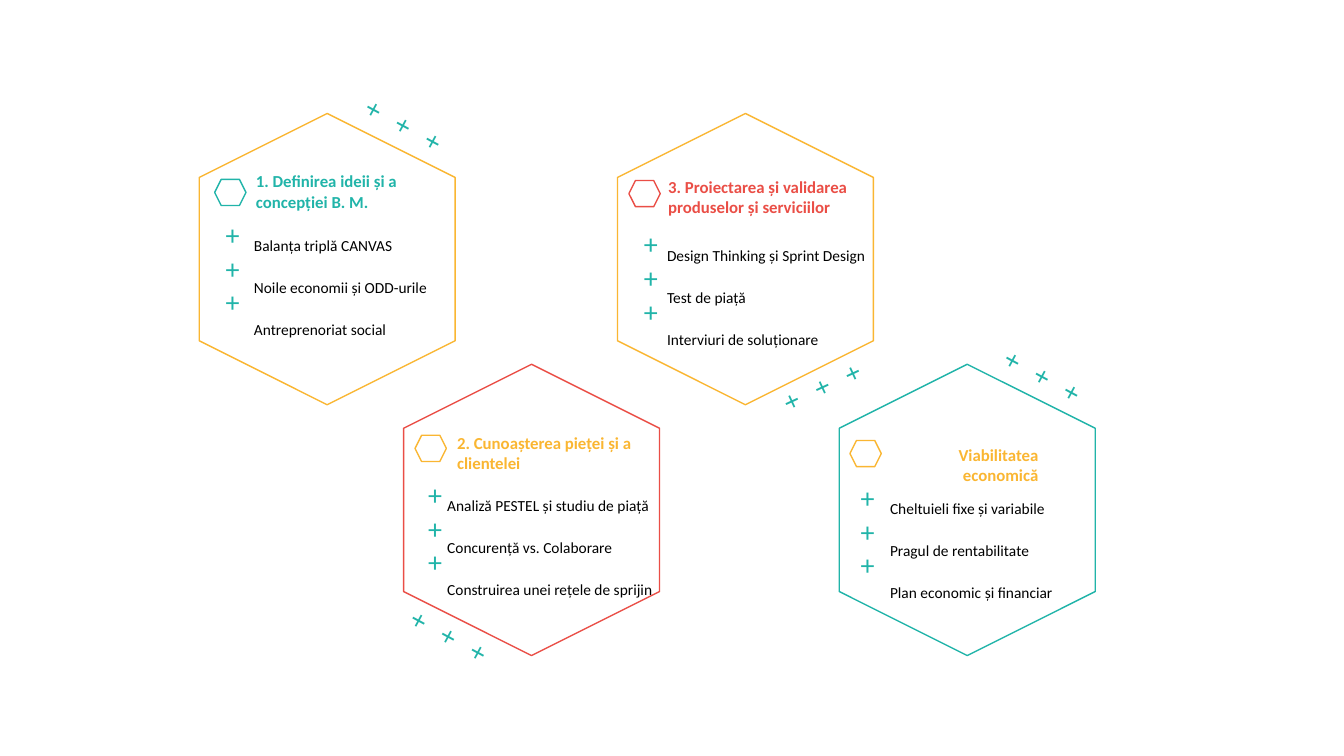
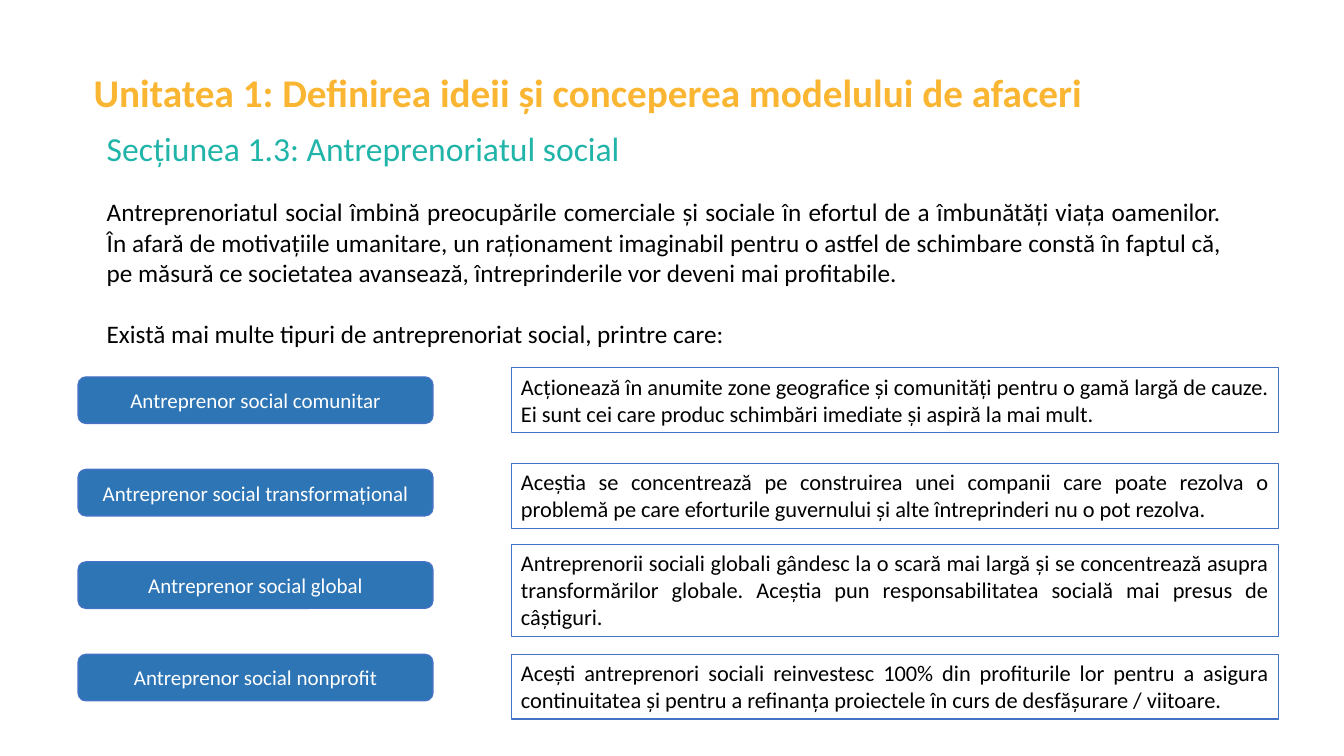
from collections import namedtuple

from pptx import Presentation
from pptx.dml.color import RGBColor
from pptx.enum import shapes, text
from pptx.util import Cm, Pt

FONT = "Calibri"
TEAL, YELLOW, RED = "21B4A9", "FAB632", "EA4E46"
BLACK, WHITE = "000000", "FFFFFF"
BLUE, OUTLINE = "2E75B5", "4472C4"
SHAPE, ALIGN = shapes.MSO_SHAPE, text.PP_ALIGN

Box = namedtuple("Box", "left top width height")
Style = namedtuple("Style", "size color bold align", defaults=(False, ALIGN.LEFT))
# Offsets inside a card are (left, top) pairs in centimetres.
Card = namedtuple(
    "Card", "left top outline accent title title_style title_at title_width "
    "items items_at items_width icon_at marks_at corner_at corner_angle")

HEXAGON_WIDTH, HEXAGON_HEIGHT = 6.45, 7.34
UPPER_ROW, LOWER_ROW = 2.86, 9.18
MARK_STYLE = Style(20, TEAL)
ITEM_STYLE = Style(11, BLACK)

CARDS = [
    Card(5.02, UPPER_ROW, YELLOW, TEAL, "1. Definirea ideii și a concepției B. M.",
         Style(12, TEAL, True), (1.18, 1.33), 5.28,
         ["Balanța triplă CANVAS", "Noile economii și ODD-urile",
          "Antreprenoriat social"],
         (1.13, 2.37), 5, (0.39, 1.66), (0.42, 2.5), (4.61, -1.21), 298.4),
    Card(10.17, LOWER_ROW, RED, YELLOW, "2. Cunoașterea pieței și a clientelei",
         Style(12, YELLOW, True), (1.1, 1.59), 5.33,
         ["Analiză PESTEL și studiu de piață", "Concurență vs. Colaborare",
          "Construirea unei rețele de sprijin"],
         (0.85, 2.6), 6.17, (0.29, 1.79), (0.37, 2.73), (0.6, 5.35), 298.4),
    Card(15.56, UPPER_ROW, YELLOW, RED,
         "3. Proiectarea și validarea produselor și serviciilor",
         Style(12, RED, True), (1.03, 1.46), 5.41,
         ["Design Thinking și Sprint Design", "Test de piață",
          "Interviuri de soluționare"],
         (1, 2.63), 6.65, (0.29, 1.69), (0.42, 2.73), (4.53, 5.42), 245.2),
    Card(21.15, LOWER_ROW, TEAL, YELLOW, "Viabilitatea economică",
         Style(12, YELLOW, True, ALIGN.RIGHT), (1.03, 1.89), 4.24,
         ["Cheltuieli fixe și variabile", "Pragul de rentabilitate",
          "Plan economic și financiar"],
         (1.03, 2.68), 6.65, (0.27, 1.92), (0.29, 2.81), (4.58, -1.21), 298.4),
]

INTRO = [
    "Antreprenoriatul social îmbină preocupările comerciale și sociale în efortul "
    "de a îmbunătăți viața oamenilor. În afară de motivațiile umanitare, un "
    "raționament imaginabil pentru o astfel de schimbare constă în faptul că, pe "
    "măsură ce societatea avansează, întreprinderile vor deveni mai profitabile.",
    "Există mai multe tipuri de antreprenoriat social, printre care:",
]

# Label, description, rise of the description above the label, its height.
ENTREPRENEURS = [
    ("Antreprenor social comunitar",
     "Acționează în anumite zone geografice și comunități pentru o gamă largă de "
     "cauze. Ei sunt cei care produc schimbări imediate și aspiră la mai mult.",
     0.23, 1.63),
    ("Antreprenor social transformațional",
     "Aceștia se concentrează pe construirea unei companii care poate rezolva o "
     "problemă pe care eforturile guvernului și alte întreprinderi nu o pot rezolva.",
     0.15, 1.63),
    ("Antreprenor social global",
     "Antreprenorii sociali globali gândesc la o scară mai largă și se concentrează "
     "asupra transformărilor globale. Aceștia pun responsabilitatea socială mai "
     "presus de câștiguri.",
     0.44, 2.31),
    ("Antreprenor social nonprofit",
     "Acești antreprenori sociali reinvestesc 100% din profiturile lor pentru a "
     "asigura continuitatea și pentru a refinanța proiectele în curs de desfășurare "
     "/ viitoare.",
     0, 1.63),
]


def rgb(color):
    return RGBColor.from_string(color)


def write(shape, lines, style, grow=True, spacing=None, gap=0):
    """Fill a shape with paragraphs; gap is the space between them in points."""
    frame = shape.text_frame
    frame.word_wrap = True
    if grow:
        frame.auto_size = text.MSO_AUTO_SIZE.SHAPE_TO_FIT_TEXT
    for index, line in enumerate(lines):
        para = frame.add_paragraph() if index else frame.paragraphs[0]
        para.text = line
        para.alignment = style.align
        if spacing:
            para.line_spacing = spacing
        if index and gap:
            para.space_before = Pt(gap)
        font = para.runs[0].font
        font.name, font.size, font.bold = FONT, Pt(style.size), style.bold
        font.color.rgb = rgb(style.color)


def add_text(page, box, lines, style, **options):
    label = page.shapes.add_textbox(*map(Cm, box))
    write(label, lines, style, **options)
    return label


def add_outline(page, kind, box, line, weight=1, fill=None):
    shape = page.shapes.add_shape(kind, *map(Cm, box))
    shape.shadow.inherit = False
    if fill:
        shape.fill.solid()
        shape.fill.fore_color.rgb = rgb(fill)
    else:
        shape.fill.background()
    shape.line.color.rgb = rgb(line)
    shape.line.width = Pt(weight)
    return shape


def add_marks(page, left, top, width, angle=0):
    """Column of plus signs, one per line because the box is narrow."""
    marks = add_text(page, Box(left, top, width, 2.82), ["+++"], MARK_STYLE)
    marks.rotation = angle


def add_card(page, card):
    def inside(offset, width, height):
        return Box(card.left + offset[0], card.top + offset[1], width, height)

    # The upright hexagon is a lying one turned about its centre.
    shift = (HEXAGON_HEIGHT - HEXAGON_WIDTH) / 2
    frame = add_outline(
        page, SHAPE.HEXAGON,
        inside((-shift, shift), HEXAGON_HEIGHT, HEXAGON_WIDTH), card.outline)
    frame.rotation = 90
    add_outline(page, SHAPE.HEXAGON, inside(card.icon_at, 0.79, 0.66), card.accent)
    add_text(page, inside(card.title_at, card.title_width, 1.27),
             [card.title], card.title_style)
    add_text(page, inside(card.items_at, card.items_width, 3.45),
             card.items, ITEM_STYLE, spacing=2.27)
    add_marks(page, *inside(card.marks_at, 0.76, 0)[:3])
    add_marks(page, *inside(card.corner_at, 1.09, 0)[:3], card.corner_angle)


def add_entrepreneur(page, box, label, description, rise, height):
    """Label at the left of the row and its framed description at the right."""
    label_width, description_left = 8.94, 10.91
    button = add_outline(page, SHAPE.ROUNDED_RECTANGLE,
                         box._replace(width=label_width), OUTLINE, fill=BLUE)
    button.text_frame.vertical_anchor = text.MSO_ANCHOR.MIDDLE
    write(button, [label], Style(15, WHITE, align=ALIGN.CENTER), grow=False)
    panel = add_outline(
        page, SHAPE.RECTANGLE,
        Box(box.left + description_left, box.top - rise,
            box.width - description_left, height), OUTLINE, 0.75)
    panel.text_frame.vertical_anchor = text.MSO_ANCHOR.TOP
    write(panel, [description], Style(16, BLACK, align=ALIGN.JUSTIFY))


def build_overview(page):
    for card in CARDS:
        add_card(page, card)


def build_section(page):
    add_text(page, Box(2.11, 1.6, 25.98, 1.45),
             ["Unitatea 1: Definirea ideii și conceperea modelului de afaceri"],
             Style(28, YELLOW, True))
    add_text(page, Box(2.44, 3.1, 21.36, 1.27),
             ["Secțiunea 1.3: Antreprenoriatul social"], Style(24, TEAL))
    add_text(page, Box(2.44, 4.83, 28.6, 4.11), INTRO,
             Style(18, BLACK, align=ALIGN.JUSTIFY), gap=22)
    first_top, pitch = 9.5, 2.33
    for index, entry in enumerate(ENTREPRENEURS):
        row = Box(1.97, first_top + index * pitch, 30.26, 1.17)
        add_entrepreneur(page, row, *entry)


def main():
    deck = Presentation()
    deck.slide_width, deck.slide_height = Cm(33.87), Cm(19.05)
    blank = deck.slide_layouts[6]
    for build in (build_overview, build_section):
        build(deck.slides.add_slide(blank))
    deck.save("out.pptx")


if __name__ == "__main__":
    main()
